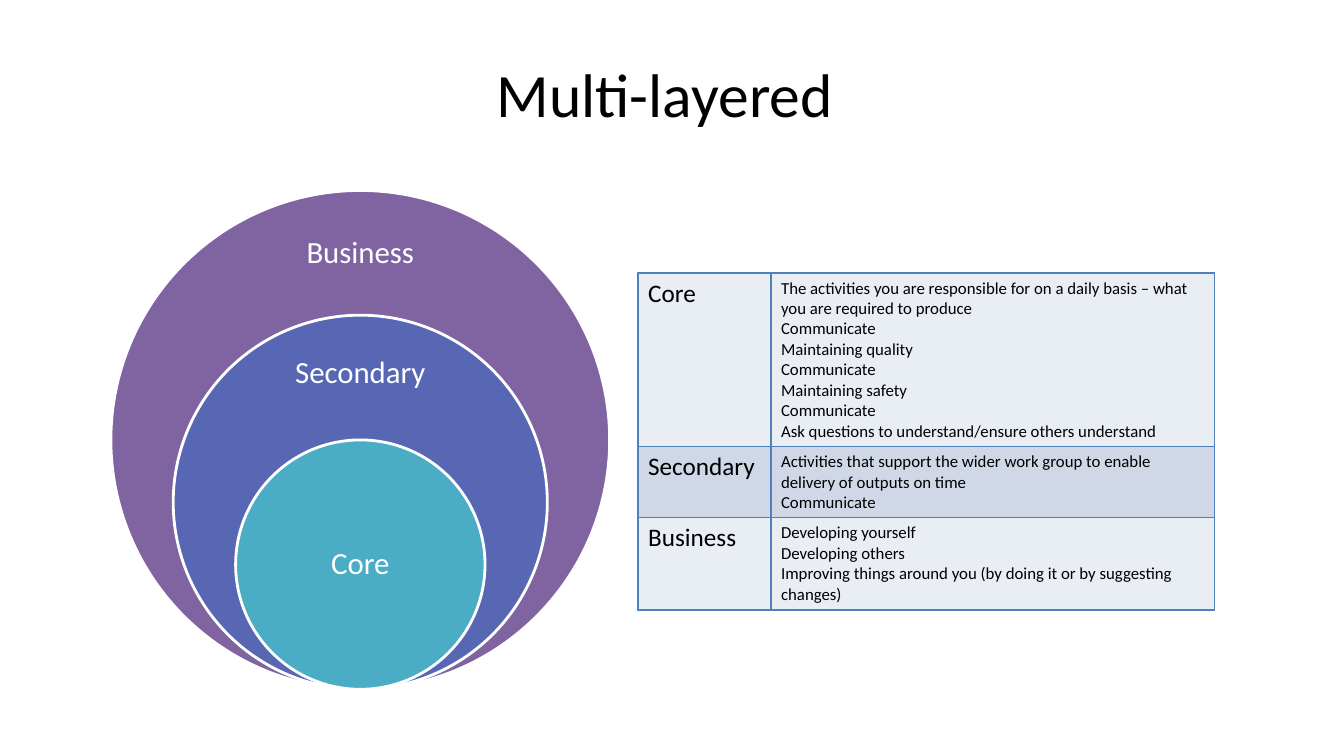
from lxml.etree import SubElement
from pptx import Presentation
from pptx.dml.color import RGBColor
from pptx.enum.shapes import MSO_SHAPE
from pptx.enum.text import MSO_ANCHOR, PP_ALIGN
from pptx.oxml import parse_xml
from pptx.oxml.ns import nsdecls, qn
from pptx.util import Cm, Pt

TITLE = "Multi-layered "
# name, fill, share of the full diameter, height of the label's middle (cm)
LAYERS = [
    ("Business", "8064A2", 1, 6.38),
    ("Secondary", "5767B4", 0.75, 9.42),
    ("Core", "4BACC6", 0.5, 14.22),
]
# name, fill, row height (cm), details
ROWS = [
    ("Core", "E9EDF4", 4.38, [
        "The activities you are responsible for on a daily basis – what you are required to produce",
        "Communicate",
        "Maintaining quality",
        "Communicate",
        "Maintaining safety",
        "Communicate",
        "Ask questions to understand/ensure others understand",
    ]),
    ("Secondary", "D0D8E8", 1.79, [
        "Activities that support the wider work group to enable delivery of outputs on time",
        "Communicate",
    ]),
    ("Business", "E9EDF4", 2.32, [
        "Developing yourself",
        "Developing others",
        "Improving things around you (by doing it or by suggesting changes)",
    ]),
]
BORDER = "4F81BD"
COLUMN_WIDTHS = (3.35, 11.18)
TABLE_LEFT, TABLE_TOP = 16.08, 6.88
DIAMETER, CIRCLE_MIDDLE, CIRCLE_BOTTOM = 12.57, 9.08, 17.37
LABEL_WIDTH, LABEL_HEIGHT = 4.4, 1.8


def rgb(value):
    return RGBColor.from_string(value)


def write(frame, lines, size, color="000000", **paragraph_format):
    for index, line in enumerate(lines):
        para = frame.paragraphs[0] if index == 0 else frame.add_paragraph()
        for name, value in paragraph_format.items():
            setattr(para, name, value)
        span = para.add_run()
        span.text = line
        for name, value in {"name": "Calibri", "size": Pt(size)}.items():
            setattr(span.font, name, value)
        span.font.color.rgb = rgb(color)


def add_layer(page, name, fill, share, label_middle):
    size = DIAMETER * share
    circle = page.shapes.add_shape(
        MSO_SHAPE.OVAL, Cm(CIRCLE_MIDDLE - size / 2), Cm(CIRCLE_BOTTOM - size), Cm(size), Cm(size))
    circle.shadow.inherit = False
    circle.fill.solid()
    circle.fill.fore_color.rgb = rgb(fill)
    circle.line.color.rgb = rgb("FFFFFF")
    circle.line.width = Pt(2)

    label = page.shapes.add_textbox(
        Cm(CIRCLE_MIDDLE - LABEL_WIDTH / 2), Cm(label_middle - LABEL_HEIGHT / 2),
        Cm(LABEL_WIDTH), Cm(LABEL_HEIGHT))
    frame = label.text_frame
    frame.word_wrap = True
    frame.vertical_anchor = MSO_ANCHOR.MIDDLE
    for side in ("left", "right", "top", "bottom"):
        setattr(frame, f"margin_{side}", Cm(0.43))
    write(frame, [name], 22, "FFFFFF", alignment=PP_ALIGN.CENTER, line_spacing=0.9)


def add_borders(cell):
    properties = cell._tc.get_or_add_tcPr()
    for index, side in enumerate(("lnL", "lnR", "lnT", "lnB")):
        line = parse_xml(f'<a:{side} {nsdecls("a")} w="{Pt(1)}"/>')
        fill = SubElement(line, qn("a:solidFill"))
        SubElement(fill, qn("a:srgbClr"), val=BORDER)
        properties.insert(index, line)


def add_details(page):
    table = page.shapes.add_table(
        len(ROWS), len(COLUMN_WIDTHS), Cm(TABLE_LEFT), Cm(TABLE_TOP),
        Cm(sum(COLUMN_WIDTHS)), Cm(sum(row[2] for row in ROWS))).table
    table.first_row = table.horz_banding = False
    for column, width in zip(table.columns, COLUMN_WIDTHS):
        column.width = Cm(width)
    for row, (name, fill, height, details) in zip(table.rows, ROWS):
        row.height = Cm(height)
        for cell, lines, size in zip(row.cells, ([name], details), (18, 12)):
            write(cell.text_frame, lines, size)
            cell.fill.solid()
            cell.fill.fore_color.rgb = rgb(fill)
            add_borders(cell)


def main():
    deck = Presentation()
    deck.slide_width, deck.slide_height = Cm(33.87), Cm(19.05)
    page = deck.slides.add_slide(deck.slide_layouts[5])

    title = page.shapes.title
    box = {"left": 1.69, "top": 0.76, "width": 30.48, "height": 3.18}
    for name, value in box.items():
        setattr(title, name, Cm(value))
    title.text_frame.vertical_anchor = MSO_ANCHOR.MIDDLE
    write(title.text_frame, [TITLE], 44, alignment=PP_ALIGN.CENTER)

    for layer in LAYERS:
        add_layer(page, *layer)
    add_details(page)
    deck.save("out.pptx")


if __name__ == "__main__":
    main()
